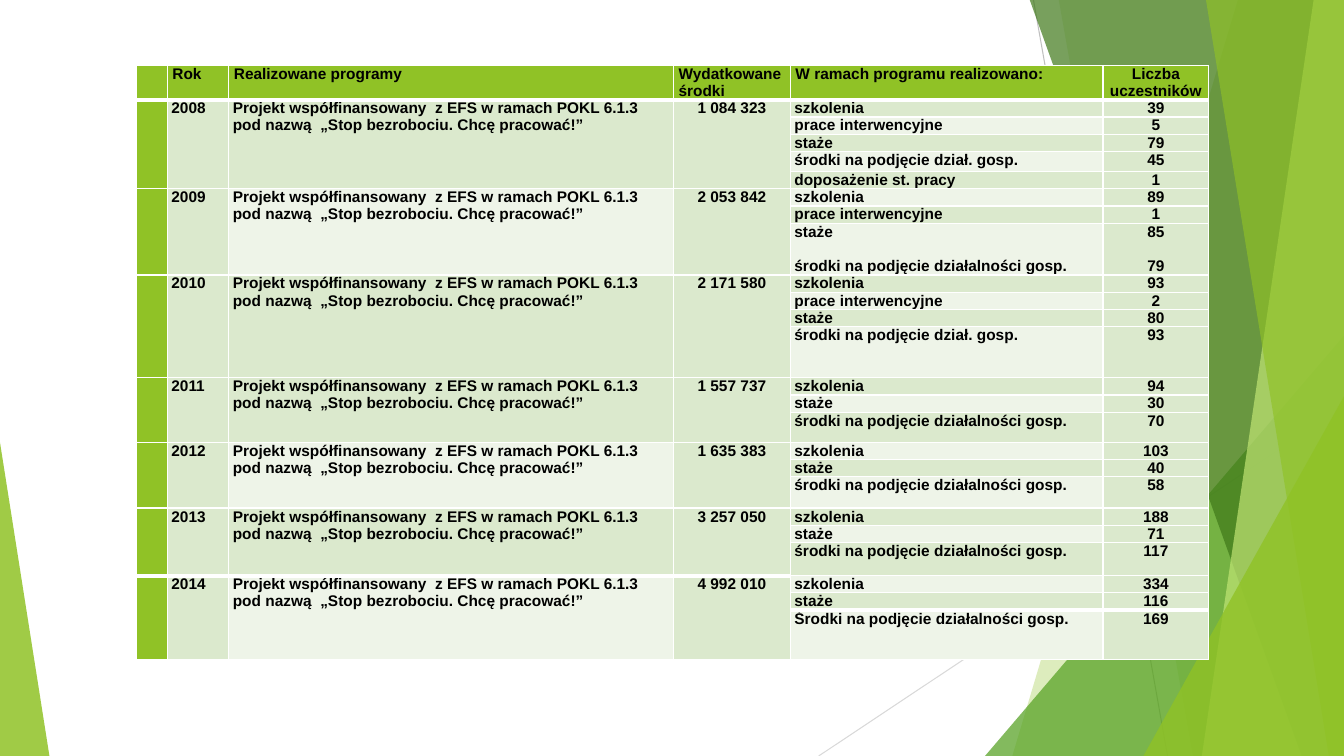
import pptx
import pptx.util
import pptx.dml.color
import pptx.enum.shapes
import pptx.enum.text
import pptx.oxml.ns
from lxml import etree

Inches = pptx.util.Inches
RGBColor = pptx.dml.color.RGBColor
qn = pptx.oxml.ns.qn

LIME = RGBColor(0x90, 0xC2, 0x26)
GREEN = RGBColor(0x54, 0xA0, 0x21)
FOREST = RGBColor(0x3F, 0x78, 0x19)
PALE_LIME = RGBColor(0xC0, 0xE4, 0x74)
DARK_BAND = RGBColor(0xDB, 0xE9, 0xCD)
LIGHT_BAND = RGBColor(0xEE, 0xF4, 0xE8)
WHITE = RGBColor(0xFF, 0xFF, 0xFF)
BLACK = RGBColor(0, 0, 0)
GREY = RGBColor(0xBF, 0xBF, 0xBF)
LIGHT_GREY = RGBColor(0xD9, 0xD9, 0xD9)

WIDTH, HEIGHT, TOP = 13.33, 7.5, -0.01
FONT = {"name": "Arial", "size": pptx.util.Pt(11), "bold": True}
LEFT = pptx.enum.text.PP_ALIGN.LEFT
CENTER = pptx.enum.text.PP_ALIGN.CENTER

COLUMNS = [0.31, 0.61, 4.41, 1.16, 3.1, 1.05]
HEADERS = ["", "Rok", "Realizowane programy", "Wydatkowane środki",
           "W ramach programu realizowano:", "Liczba uczestników"]
PROGRAMME = ("Projekt współfinansowany  z EFS w ramach POKL 6.1.3 "
             "pod nazwą  „Stop bezrobociu. Chcę pracować!”")
TRAINING, WORKS, INTERNSHIPS = "szkolenia", "prace interwencyjne", "staże"
BUSINESS = "środki na podjęcie działalności gosp."
BUSINESS_SHORT = "środki na podjęcie dział. gosp."
HEADER_HEIGHT, LINE_HEIGHT = 0.33, 0.17
YEARS = [
    ("2008", "1 084 323", [(TRAINING, "39"), (WORKS, "5"), (INTERNSHIPS, "79"),
                           (BUSINESS_SHORT, "45", 0.2), ("doposażenie st. pracy", "1")]),
    ("2009", "2 053 842", [(TRAINING, "89"), (WORKS, "1"),
                           (INTERNSHIPS + "\n" + BUSINESS, "85\n79", 0.51)]),
    ("2010", "2 171 580", [(TRAINING, "93"), (WORKS, "2"), (INTERNSHIPS, "80"),
                           (BUSINESS_SHORT, "93", 0.51)]),
    ("2011", "1 557 737", [(TRAINING, "94"), (INTERNSHIPS, "30"), (BUSINESS, "70", 0.3)]),
    ("2012", "1 635 383", [(TRAINING, "103"), (INTERNSHIPS, "40"), (BUSINESS, "58", 0.31)]),
    ("2013", "3 257 050", [(TRAINING, "188"), (INTERNSHIPS, "71"), (BUSINESS, "117", 0.33)]),
    ("2014", "4 992 010", [(TRAINING, "334"), (INTERNSHIPS, "116"),
                           ("Środki na podjęcie działalności gosp.", "169", 0.49)]),
]


def paint(s, color, opacity):
    s.shadow.inherit = False
    s.fill.solid()
    s.fill.fore_color.rgb = color
    s.line.fill.background()
    fill = s.fill._xPr.find(qn("a:solidFill"))
    etree.SubElement(fill[0], qn("a:alpha"), val=str(opacity * 1000))


def add_panel(slide, top_x, right_x, bottom_x, color, opacity):
    fb = slide.shapes.build_freeform(Inches(top_x), Inches(TOP))
    fb.add_line_segments([(Inches(x), Inches(y)) for x, y in
                          [(right_x, TOP), (right_x, HEIGHT), (bottom_x, HEIGHT)]])
    paint(fb.convert_to_shape(), color, opacity)


def add_triangle(slide, left, top, width, apex, color, opacity):
    s = slide.shapes.add_shape(pptx.enum.shapes.MSO_SHAPE.ISOSCELES_TRIANGLE, Inches(left),
                               Inches(top), Inches(width), Inches(HEIGHT - top))
    s.adjustments[0] = apex
    paint(s, color, opacity)


def add_line(slide, x1, y1, x2, y2, color):
    s = slide.shapes.add_connector(pptx.enum.shapes.MSO_CONNECTOR.STRAIGHT,
                                   Inches(x1), Inches(y1), Inches(x2), Inches(y2))
    s.line.color.rgb = color
    s.line.width = pptx.util.Pt(0.75)
    etree.SubElement(s._element.spPr, qn("a:effectLst"))


def add_backdrop(slide):
    add_line(slide, 10.25, 0, 11.58, HEIGHT, GREY)
    add_line(slide, WIDTH, 4.03, 8.12, HEIGHT, LIGHT_GREY)
    add_panel(slide, 12.28, WIDTH, 10.04, LIME, 30)
    add_panel(slide, 10.5, WIDTH, 11.83, LIME, 20)
    add_triangle(slide, 9.77, 3.33, 3.56, 1, GREEN, 72)
    add_panel(slide, 10.21, WIDTH, 12.91, FOREST, 70)
    add_panel(slide, 13.03, WIDTH, 11.92, PALE_LIME, 70)
    add_panel(slide, 11.96, WIDTH, 13.18, LIME, 65)
    add_triangle(slide, 11.34, 3.93, 1.99, 1, LIME, 80)
    add_triangle(slide, 0, 4.39, 0.49, 0, LIME, 85)


def border_cell(cell, top, bottom):
    tcPr = cell._tc.get_or_add_tcPr()
    for side, width in {"L": 1, "R": 1, "T": top, "B": bottom}.items():
        ln = etree.SubElement(tcPr, qn("a:ln" + side), w=str(pptx.util.Pt(width)))
        fill = etree.SubElement(ln, qn("a:solidFill"))
        etree.SubElement(fill, qn("a:srgbClr"), val=str(WHITE))


def write_cell(cell, text, align, margin):
    cell.margin_left = cell.margin_right = Inches(margin)
    cell.margin_top = cell.margin_bottom = 0
    tf = cell.text_frame
    for i, line in enumerate(text.split("\n")):
        p = tf.add_paragraph() if i else tf.paragraphs[0]
        p.alignment = align
        if i:
            p.space_before = pptx.util.Pt(12.5)
        if not line:
            etree.SubElement(p._p, qn("a:endParaRPr"), sz="1100")
            continue
        r = p.add_run()
        r.text = line
        r.font.color.rgb = BLACK
        for name, value in FONT.items():
            setattr(r.font, name, value)


def border_width(row, col, last_year, count):
    thick_row = last_year if col < 4 else count - 1
    return 3 if row in (1, thick_row) else 1


def add_programme_table(slide):
    rows, heights, spans = [HEADERS], [HEADER_HEIGHT], []
    for year, spent, activities in YEARS:
        spans.append((len(rows), len(activities)))
        for i, (activity, people, *height) in enumerate(activities):
            lead = ["", year, PROGRAMME, spent] if i == 0 else [""] * 4
            rows.append(lead + [activity, people])
            heights.append(height[0] if height else LINE_HEIGHT)
    frame = slide.shapes.add_table(len(rows), len(COLUMNS), Inches(1.35), Inches(0.65),
                                   Inches(sum(COLUMNS)), Inches(sum(heights)))
    table = frame.table
    table.first_row = table.horz_banding = False
    for column, width in zip(table.columns, COLUMNS):
        column.width = Inches(width)
    for row, height in zip(table.rows, heights):
        row.height = Inches(height)
    last_year, span_of = spans[-1][0], dict(spans)
    for r, texts in enumerate(rows):
        for c, text in enumerate(texts):
            cell = table.cell(r, c)
            centred = c == 5 or (c == 3 and r > 0)
            write_cell(cell, text, CENTER if centred else LEFT, 0.04 if r else 0.05)
            below = r + (span_of.get(r, 1) if c < 4 else 1)
            border_cell(cell, border_width(r, c, last_year, len(rows)),
                        border_width(below, c, last_year, len(rows)))
            light = c in (2, 4) and r % 2 == 0
            cell.fill.solid()
            cell.fill.fore_color.rgb = (LIME if r == 0 or c == 0
                                        else LIGHT_BAND if light else DARK_BAND)
    for start, span in spans:
        for c in range(4):
            table.cell(start, c).merge(table.cell(start + span - 1, c))


def main():
    prs = pptx.Presentation()
    prs.slide_width, prs.slide_height = Inches(WIDTH), Inches(HEIGHT)
    slide = prs.slides.add_slide(prs.slide_layouts[6])
    add_backdrop(slide)
    add_programme_table(slide)
    prs.save("out.pptx")


if __name__ == "__main__":
    main()
